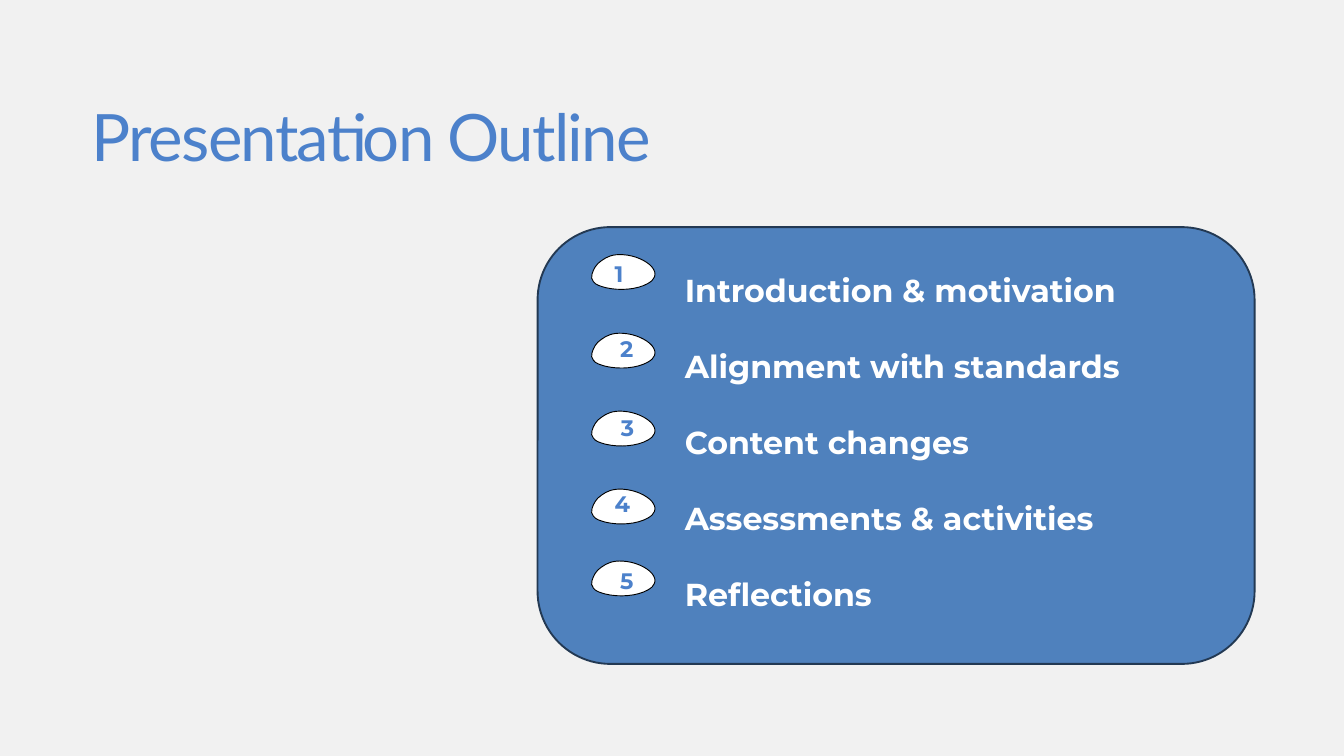
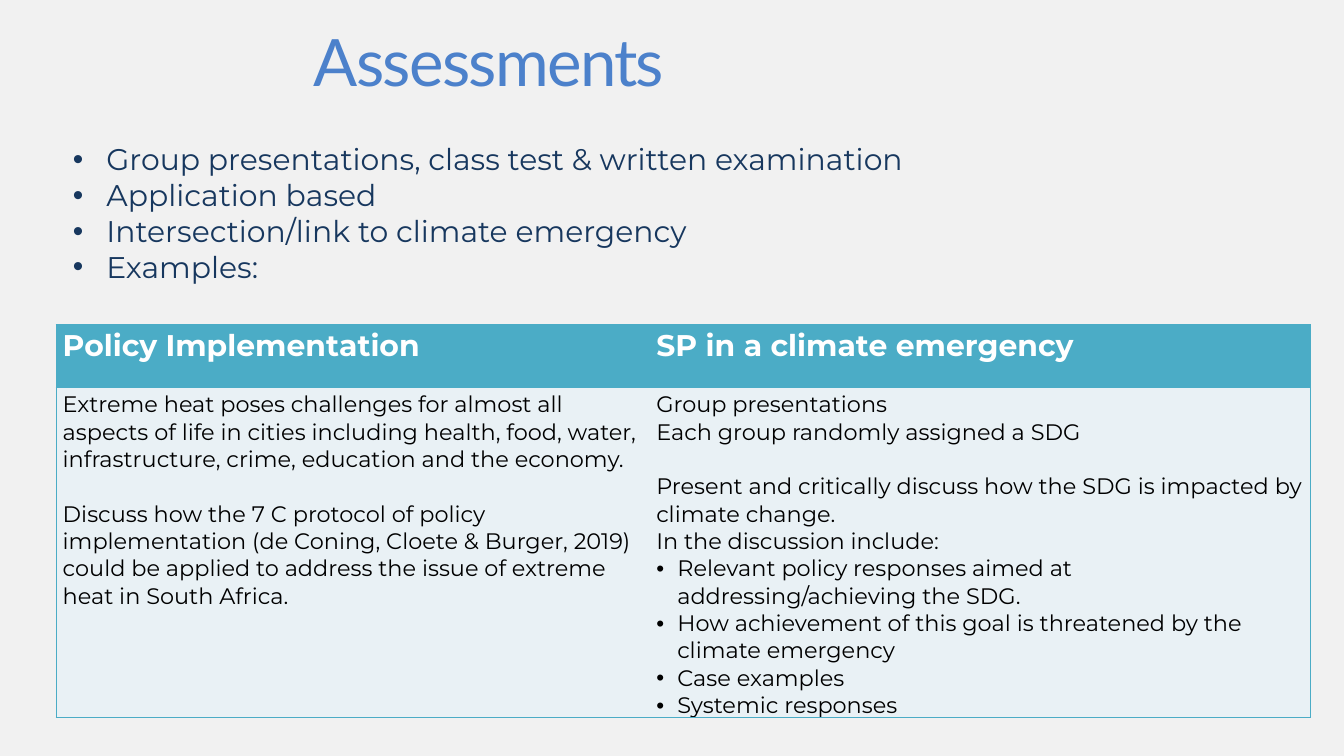
from lxml import etree
from pptx import Presentation
from pptx.dml.color import RGBColor
from pptx.enum.shapes import MSO_SHAPE as SHAPE
from pptx.enum.text import MSO_ANCHOR as ANCHOR, MSO_AUTO_SIZE as AUTO, PP_ALIGN as ALIGN
from pptx.oxml.ns import qn
from pptx.util import Inches, Pt

COLORS = {
    "page": "F1F1F1",
    "title": "4C81CB",
    "panel": "4F81BD",
    "panel_edge": "233953",
    "navy": "17375E",
    "teal": "4BACC6",
    "pale": "E9F1F5",
    "white": "FFFFFF",
    "black": "000000",
}
TITLE_FONT, BODY_FONT = "Lato", "Montserrat"
PLAIN_TABLE_STYLE = "{2D5ABB26-0587-4C30-8999-92F81FD0307C}"
CELL_LINE_GAP = Pt(29.25)

TOPICS = [
    "Introduction & motivation",
    "Alignment with standards",
    "Content changes",
    "Assessments & activities",
    "Reflections",
]
PEBBLE_TOPS = [3.78, 4.95, 6.11, 7.27, 8.34]
NUMBER_SPOTS = [(9.05, 3.82), (9.13, 4.94), (9.14, 6.12), (9.05, 7.25), (9.13, 8.39)]

# Pebble outline, inches from its top left corner: start, then cubic segments.
PEBBLE_START = (0.9, 0.19)
PEBBLE_CURVES = [
    ((0.82, 0.10), (0.65, 0.02), (0.47, 0.01)),
    ((0.32, 0.00), (0.23, 0.04), (0.15, 0.10)),
    ((0.07, 0.15), (0.03, 0.23), (0.01, 0.30)),
    ((0.00, 0.34), (0.00, 0.38), (0.03, 0.41)),
    ((0.06, 0.46), (0.14, 0.48), (0.21, 0.50)),
    ((0.42, 0.55), (0.68, 0.53), (0.84, 0.44)),
    ((0.89, 0.41), (0.93, 0.38), (0.94, 0.34)),
    ((0.96, 0.29), (0.94, 0.24), (0.90, 0.19)),
]

ASSESSMENT_POINTS = [
    "Group presentations, class test & written examination",
    "Application based",
    "Intersection/link to climate emergency",
    "Examples:",
]
MODULES = ["Policy Implementation", "SP in a climate emergency"]
POLICY_TASK = [
    ("Extreme heat poses challenges for almost all aspects of life in cities including "
     "health, food, water, infrastructure, crime, education and the economy.", ""),
    ("Discuss how the 7 C protocol of policy implementation (de Coning, Cloete & Burger, "
     "2019) could be applied to address the issue of extreme heat in South Africa.", "gap"),
]
CLIMATE_TASK = [
    ("Group presentations", ""),
    ("Each group randomly assigned a SDG", ""),
    ("Present and critically discuss how the SDG is impacted by climate change.", "gap"),
    ("In the discussion include:", ""),
    ("Relevant policy responses aimed at addressing/achieving the SDG.", "bullet"),
    ("How achievement of this goal is threatened by the climate emergency", "bullet"),
    ("Case examples", "bullet"),
    ("Systemic responses", "bullet"),
]


def rgb(name):
    return RGBColor.from_string(COLORS[name])


def add_run(paragraph, text, size, color, bold=False, font=BODY_FONT):
    run = paragraph.add_run()
    run.text = text
    run.font.name, run.font.size, run.font.bold = font, Pt(size), bold
    run.font.color.rgb = rgb(color)
    return run


def add_bullet(paragraph, indent):
    props = paragraph._p.get_or_add_pPr()
    props.set("marL", str(Inches(indent)))
    props.set("indent", str(-Inches(indent)))
    etree.SubElement(props, qn("a:buFont")).set("typeface", "Arial")
    etree.SubElement(props, qn("a:buChar")).set("char", "•")


def paragraphs(frame, count):
    """Yield the frame's first paragraph, then new ones up to count."""
    yield frame.paragraphs[0]
    for _ in range(count - 1):
        yield frame.add_paragraph()


def fit_frame(frame, inset):
    frame.word_wrap = True
    frame.auto_size = AUTO.SHAPE_TO_FIT_TEXT
    frame.vertical_anchor = ANCHOR.TOP
    if not inset:
        frame.margin_left = frame.margin_right = frame.margin_top = frame.margin_bottom = 0


def add_text_box(slide, left, top, width, height, inset=False):
    box = slide.shapes.add_textbox(Inches(left), Inches(top), Inches(width), Inches(height))
    fit_frame(box.text_frame, inset)
    return box.text_frame


def add_titled_slide(prs, text, left, top, width, height):
    slide = prs.slides.add_slide(prs.slide_layouts[5])
    title = slide.shapes.title
    title.left, title.top = Inches(left), Inches(top)
    title.width, title.height = Inches(width), Inches(height)
    fit_frame(title.text_frame, inset=False)
    line = title.text_frame.paragraphs[0]
    line.alignment, line.line_spacing = ALIGN.LEFT, Pt(72.8)
    run = add_run(line, text, 70, "title", font=TITLE_FONT)
    run._r.get_or_add_rPr().set("spc", "-185")
    return slide


def paint(shape, fill, edge, weight):
    shape.shadow.inherit = False
    shape.fill.solid()
    shape.fill.fore_color.rgb = rgb(fill)
    shape.line.color.rgb = rgb(edge)
    shape.line.width = Pt(weight)


def curve_outline(shape):
    """Turn each three straight segments of the outline into one cubic curve."""
    segments = list(shape._element.iter(qn("a:lnTo")))
    for first in range(0, len(segments), 3):
        curve = etree.Element(qn("a:cubicBezTo"))
        segments[first].addprevious(curve)
        for segment in segments[first:first + 3]:
            curve.append(segment[0])
            segment.getparent().remove(segment)


def add_pebble(slide, left, top):
    start, *points = [(Inches(left + x), Inches(top + y)) for x, y in
                      [PEBBLE_START, *(point for curve in PEBBLE_CURVES for point in curve)]]
    outline = slide.shapes.build_freeform(*start)
    outline.add_line_segments(points, close=True)
    pebble = outline.convert_to_shape()
    curve_outline(pebble)
    paint(pebble, "white", "black", 1)


def add_cell_borders(cell, sides):
    """Draw teal lines on the sides named, out of L, R, T and B, and none elsewhere."""
    props = cell._tc.get_or_add_tcPr()
    for side in "LRTB":
        line = etree.SubElement(props, qn(f"a:ln{side}"), w=str(Pt(1)), cmpd="sng")
        if side in sides:
            fill = etree.SubElement(line, qn("a:solidFill"))
            etree.SubElement(fill, qn("a:srgbClr")).set("val", COLORS["teal"])
            etree.SubElement(line, qn("a:prstDash")).set("val", "solid")
        else:
            etree.SubElement(line, qn("a:noFill"))


def fill_cell(cell, lines, fill, size, color, bold=False):
    cell.fill.solid()
    cell.fill.fore_color.rgb = rgb(fill)
    for paragraph, (text, style) in zip(paragraphs(cell.text_frame, len(lines)), lines):
        if style == "gap":
            paragraph.space_before = CELL_LINE_GAP
        elif style == "bullet":
            add_bullet(paragraph, 5 / 16)
        add_run(paragraph, text, size, color, bold)


def add_module_table(slide):
    frame = slide.shapes.add_table(2, 2, Inches(5 / 6), Inches(4.83), Inches(56 / 3), Inches(5.84))
    table = frame.table
    table.horz_banding = table.first_row = False
    table._tbl.tblPr.find(qn("a:tableStyleId")).text = PLAIN_TABLE_STYLE
    for row, height in zip(table.rows, (0.94, 4.9)):
        row.height = Inches(height)
    for column, width in zip(table.columns, (53 / 6, 59 / 6)):
        column.width = Inches(width)
    for col, (module, task) in enumerate(zip(MODULES, (POLICY_TASK, CLIMATE_TASK))):
        header, body = table.cell(0, col), table.cell(1, col)
        for cell in (header, body):
            add_cell_borders(cell, ("LTB", "RTB")[col])
        fill_cell(header, [(module, "")], "teal", 32, "white", bold=True)
        fill_cell(body, task, "pale", 24, "black")


def build_outline(prs):
    slide = add_titled_slide(prs, "Presentation Outline", 1.36, 1.59, 9.75, 2.06)
    panel = slide.shapes.add_shape(SHAPE.ROUNDED_RECTANGLE, Inches(8), Inches(3.38),
                                   Inches(10.67), Inches(6.5))
    paint(panel, "panel", "panel_edge", 2)
    topic_frame = add_text_box(slide, 10.19, 3.46, 8.83, 5.55)
    for paragraph, topic in zip(paragraphs(topic_frame, len(TOPICS)), TOPICS):
        paragraph.line_spacing = 2.0
        add_run(paragraph, topic, 34, "white", bold=True)
    for top in PEBBLE_TOPS:
        add_pebble(slide, 8.8, top)
    for number, (left, top) in enumerate(NUMBER_SPOTS, 1):
        number_frame = add_text_box(slide, left, top, 0.73, 0.5, inset=True)
        add_run(number_frame.paragraphs[0], str(number), 24, "title", bold=True)


def build_assessments(prs):
    slide = add_titled_slide(prs, "Assessments", 4.67, 0.47, 9.15, 1.04)
    point_frame = add_text_box(slide, 13 / 12, 2.1, 13.56, 2.15)
    for paragraph, point in zip(paragraphs(point_frame, len(ASSESSMENT_POINTS)),
                                ASSESSMENT_POINTS):
        add_bullet(paragraph, 0.5)
        add_run(paragraph, point, 32, "navy")
    add_module_table(slide)


def main():
    prs = Presentation()
    prs.slide_width, prs.slide_height = Inches(20), Inches(11.25)
    page = prs.slide_master.background.fill
    page.solid()
    page.fore_color.rgb = rgb("page")
    build_outline(prs)
    build_assessments(prs)
    prs.save("out.pptx")


if __name__ == "__main__":
    main()
